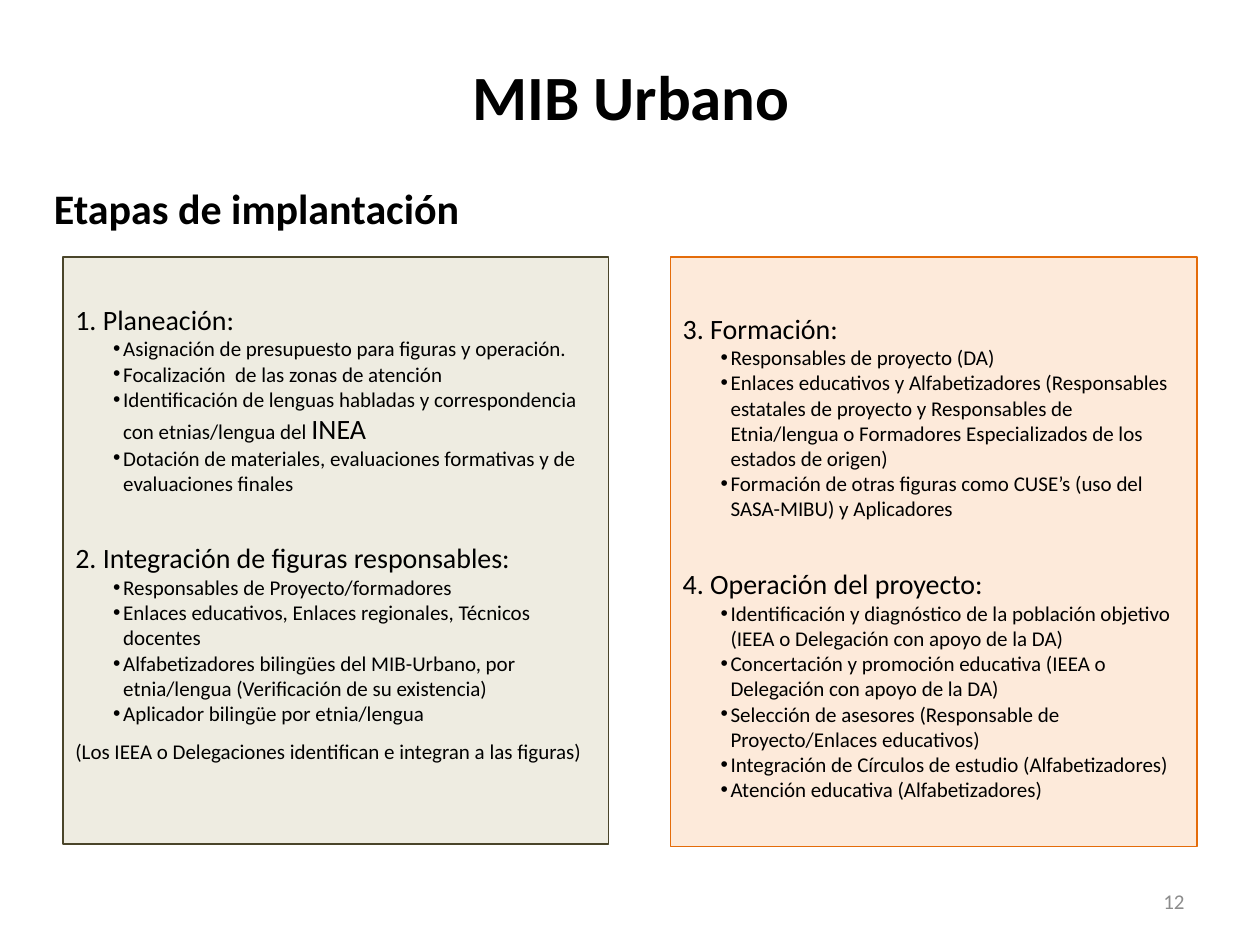
"""Build the MIB Urbano slide with its four implementation stages."""
from dataclasses import dataclass

from lxml.etree import SubElement as Sub
from pptx import Presentation
from pptx.dml.color import RGBColor as Rgb
from pptx.enum.shapes import MSO_SHAPE as Kind
from pptx.enum.text import MSO_ANCHOR as Anchor, PP_ALIGN as Align
from pptx.oxml.ns import qn
from pptx.util import Inches, Pt


@dataclass(frozen=True)
class Theme:
    face: str = "Calibri"
    ink: str = "000000"
    gray: str = "8C8C8C"
    sand: str = "EEECE1"
    olive: str = "4A452A"
    peach: str = "FDEADA"
    rust: str = "E46C0A"
    title: int = 36
    sub: int = 24
    head: int = 16
    body: int = 12


THEME = Theme()

LEFT = [
    ("1. Planeación:", [
        "Asignación de presupuesto para figuras y operación.",
        "Focalización  de las zonas de atención",
        ("Identificación de lenguas habladas y correspondencia "
         "con etnias/lengua del ", "INEA"),
        "Dotación de materiales, evaluaciones formativas y de "
        "evaluaciones finales",
    ]),
    ("2. Integración de figuras responsables:", [
        "Responsables de Proyecto/formadores",
        "Enlaces educativos, Enlaces regionales, Técnicos docentes",
        "Alfabetizadores bilingües del MIB-Urbano, por etnia/lengua "
        "(Verificación de su existencia)",
        "Aplicador bilingüe por etnia/lengua",
    ]),
]
NOTE = "(Los IEEA o Delegaciones identifican e integran a las figuras)"
RIGHT = [
    ("3. Formación:", [
        "Responsables de proyecto (DA)",
        "Enlaces educativos y Alfabetizadores (Responsables estatales de "
        "proyecto y Responsables de Etnia/lengua o Formadores "
        "Especializados de los estados de origen)",
        "Formación de otras figuras como CUSE’s (uso del SASA-MIBU) "
        "y Aplicadores",
    ]),
    ("4. Operación del proyecto:", [
        "Identificación y diagnóstico de la población objetivo (IEEA o "
        "Delegación con apoyo de la DA)",
        "Concertación y promoción educativa (IEEA o Delegación con apoyo "
        "de la DA)",
        "Selección de asesores (Responsable de Proyecto/Enlaces educativos)",
        "Integración de Círculos de estudio (Alfabetizadores)",
        "Atención educativa (Alfabetizadores)",
    ]),
]


def style(font, size, color=THEME.ink, bold=False):
    font.name = THEME.face
    font.size = Pt(size)
    font.bold = bold
    font.color.rgb = Rgb.from_string(color)


def label(slide, area, text, size, color=THEME.ink, bold=False,
          align=Align.LEFT):
    frame = slide.shapes.add_textbox(*map(Inches, area)).text_frame
    frame.word_wrap = True
    frame.vertical_anchor = Anchor.MIDDLE
    para = frame.paragraphs[0]
    para.text = text
    para.alignment = align
    style(para.font, size, color, bold)


def line(frame, size, text, before=0):
    para = frame.paragraphs[0]
    if para.runs:
        para = frame.add_paragraph()
    para.text = text
    para.alignment = Align.LEFT
    para.space_before = Pt(before)
    style(para.font, size)
    return para


def bullet(frame, item):
    para = frame.add_paragraph()
    para.alignment = Align.LEFT
    para.space_before = Pt(0)
    props = para._p.get_or_add_pPr()
    props.set("marL", str(Inches(0.38)))
    props.set("indent", str(Inches(-0.08)))
    Sub(props, qn("a:buFont"), typeface="Arial")
    Sub(props, qn("a:buChar"), char="•")
    if isinstance(item, str):
        para.text = item
        style(para.font, THEME.body)
        return
    for text, size in zip(item, (THEME.body, THEME.head)):
        run = para.add_run()
        run.text = text
        style(run.font, size)


def panel(slide, area, fill, edge, inset, stages):
    box = slide.shapes.add_shape(Kind.RECTANGLE, *map(Inches, area))
    box.shadow.inherit = False
    box.fill.solid()
    box.fill.fore_color.rgb = Rgb.from_string(fill)
    box.line.color.rgb = Rgb.from_string(edge)
    box.line.width = Pt(0.75)
    frame = box.text_frame
    frame.word_wrap = True
    frame.vertical_anchor = Anchor.TOP
    frame.margin_top = Inches(inset)
    for rank, (head, items) in enumerate(stages):
        line(frame, THEME.head, head, 26 * rank)
        for item in items:
            bullet(frame, item)
    return frame


def main():
    deck = Presentation()
    deck.slide_width, deck.slide_height = Inches(10), Inches(7.5)
    slide = deck.slides.add_slide(deck.slide_layouts[6])
    label(slide, (0.33, 1.38, 9, 0.53), "Etapas de implantación",
          THEME.sub, bold=True)
    frame = panel(slide, (0.5, 2.04, 4.33, 4.66), THEME.sand, THEME.olive,
                  0.36, LEFT)
    line(frame, THEME.body, NOTE, 7)
    panel(slide, (5.32, 2.04, 4.18, 4.68), THEME.peach, THEME.rust,
          0.43, RIGHT)
    label(slide, (7.17, 6.95, 2.33, 0.4), "12", THEME.body, THEME.gray,
          align=Align.RIGHT)
    label(slide, (3.65, 0.44, 2.76, 0.63), "MIB Urbano", THEME.title,
          bold=True)
    deck.save("out.pptx")


if __name__ == "__main__":
    main()
